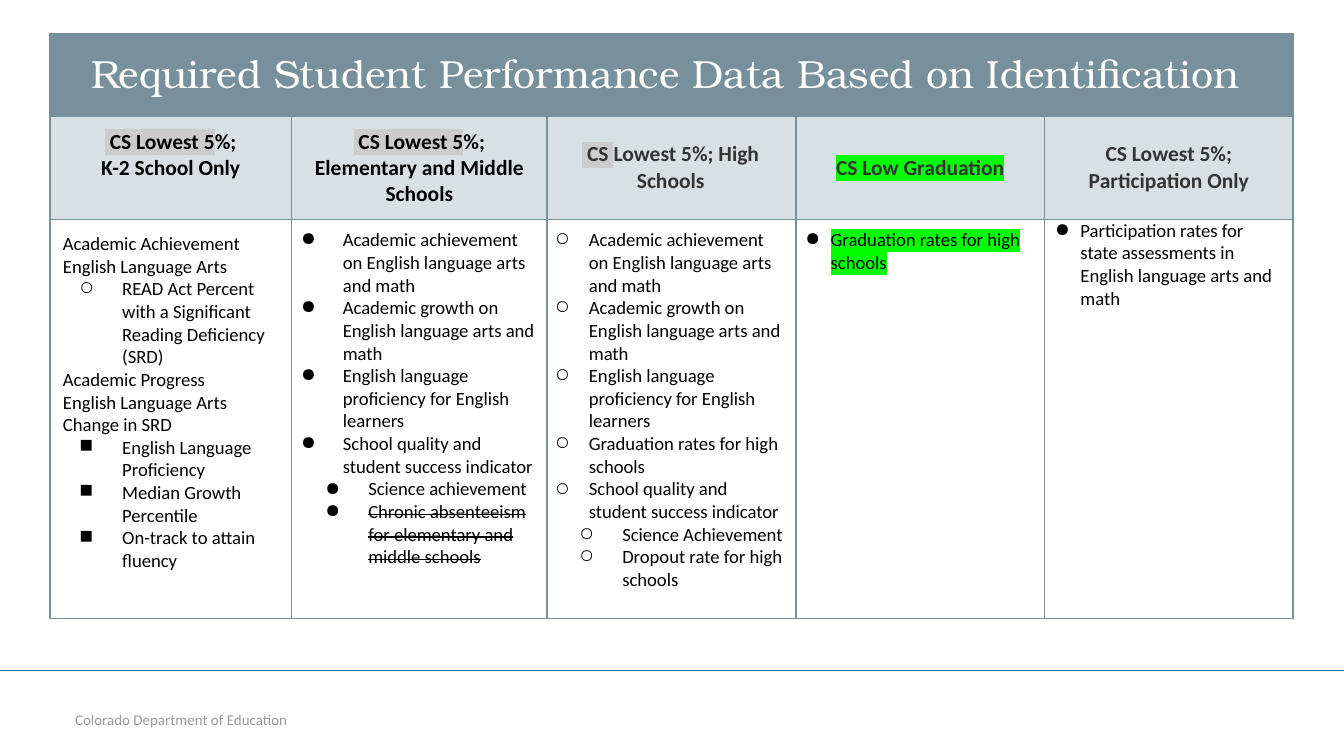
import dataclasses

import lxml.etree
import pptx
import pptx.dml.color
import pptx.enum.shapes
import pptx.enum.text
import pptx.oxml.ns
import pptx.util

Cm = pptx.util.Cm
Pt = pptx.util.Pt
qn = pptx.oxml.ns.qn

SLATE = "78909C"
BLACK = "000000"
CHARCOAL = "333333"
GRAY = "CCCCCC"
GREEN = "00FF00"

WIDE_MARGINS = (0.25, 0.25, 0.25, 0.25)
NARROW_MARGINS = (0.18, 0.18, 0.18, 0.18)
SIDE_MARGINS = (0.2, 0, 0.2, 0)


@dataclasses.dataclass
class Bullet:
    mark: str
    left: float
    hang: float
    level: int = 0


@dataclasses.dataclass
class Span:
    text: str
    highlight: str = ""
    strike: bool = False


@dataclasses.dataclass
class Column:
    width: float
    margins: tuple
    heading: list
    heading_color: str
    heading_middle: bool
    items: list


READ_ITEM = Bullet("○", 1.12, 0.81, 1)
PROGRESS_ITEM = Bullet("■", 1.12, 0.81, 2)
MIDDLE_ITEM = Bullet("●", 0.79, 0.81)
MIDDLE_SUBITEM = Bullet("●", 1.27, 0.81)
HIGH_ITEM = Bullet("○", 0.64, 0.66, 1)
HIGH_SUBITEM = Bullet("○", 1.27, 0.81, 1)
SINGLE_ITEM = Bullet("●", 0.48, 0.48)

SHARED_INDICATORS = [
    "Academic achievement on English language arts and math",
    "Academic growth on English language arts and math",
    "English language proficiency for English learners",
]
QUALITY = "School quality and student success indicator"
GRADUATION = "Graduation rates for high schools"

COLUMNS = [
    Column(4.57, WIDE_MARGINS,
           [[Span(" CS Lowest 5", GRAY), Span("%;")], [Span("K-2 School Only")]],
           BLACK, False,
           [(None, Span("Academic Achievement")),
            (None, Span("English Language Arts")),
            (READ_ITEM, Span("READ Act Percent with a Significant Reading Deficiency (SRD)")),
            (None, Span("Academic Progress")),
            (None, Span("English Language Arts")),
            (None, Span("Change in SRD")),
            (PROGRESS_ITEM, Span("English Language Proficiency")),
            (PROGRESS_ITEM, Span("Median Growth Percentile")),
            (PROGRESS_ITEM, Span("On-track to attain fluency"))]),
    Column(4.83, NARROW_MARGINS,
           [[Span(" CS Lowest 5", GRAY), Span("%; Elementary and Middle Schools")]],
           BLACK, False,
           [(MIDDLE_ITEM, Span(text)) for text in SHARED_INDICATORS + [QUALITY]]
           + [(MIDDLE_SUBITEM, Span("Science achievement")),
              (MIDDLE_SUBITEM,
               Span("Chronic absenteeism for elementary and middle schools", strike=True))]),
    Column(4.7, (0.15, 0.18, 0.18, 0.18),
           [[Span(" CS ", GRAY), Span("Lowest 5%; High Schools")]],
           CHARCOAL, True,
           [(HIGH_ITEM, Span(text)) for text in SHARED_INDICATORS + [GRADUATION, QUALITY]]
           + [(HIGH_SUBITEM, Span("Science Achievement")),
              (HIGH_SUBITEM, Span("Dropout rate for high schools"))]),
    Column(4.7, NARROW_MARGINS,
           [[Span("CS Low Graduation", GREEN)]], CHARCOAL, True,
           [(SINGLE_ITEM, Span(GRADUATION, GREEN))]),
    Column(4.7, SIDE_MARGINS,
           [[Span("CS Lowest 5%; Participation Only")]], CHARCOAL, True,
           [(SINGLE_ITEM,
             Span("Participation rates for state assessments in English language arts and math"))]),
]


def color(value):
    return pptx.dml.color.RGBColor.from_string(value)


def add_solid(parent, tag, value):
    element = lxml.etree.SubElement(parent, qn(tag))
    lxml.etree.SubElement(element, qn("a:srgbClr")).set("val", value)


def set_font(para, size, value, name="Calibri", bold=False):
    font = para.font
    font.size, font.name, font.bold = Pt(size), name, bold
    font.color.rgb = color(value)


def add_bullet(para, bullet):
    para.level = bullet.level
    properties = para._p.get_or_add_pPr()
    properties.set("marL", str(Cm(bullet.left)))
    properties.set("indent", str(-Cm(bullet.hang)))
    add_solid(properties, "a:buClr", BLACK)
    lxml.etree.SubElement(properties, qn("a:buChar")).set("char", bullet.mark)


def add_spans(para, spans):
    for span in spans:
        run = para.add_run()
        run.text = span.text
        properties = run._r.get_or_add_rPr()
        if span.strike:
            properties.set("strike", "sngStrike")
        if span.highlight:
            add_solid(properties, "a:highlight", span.highlight)


def next_para(frame, index):
    return frame.add_paragraph() if index else frame.paragraphs[0]


def style_cell(cell, fill, margins, line_width=1, opacity=100, middle=False):
    cell.margin_left, cell.margin_top, cell.margin_right, cell.margin_bottom = map(Cm, margins)
    anchors = pptx.enum.text.MSO_ANCHOR
    cell.vertical_anchor = anchors.MIDDLE if middle else anchors.TOP
    cell.fill.solid()
    cell.fill.fore_color.rgb = color(fill)
    properties = cell._tc.get_or_add_tcPr()
    if opacity < 100:
        shade = properties.find(".//" + qn("a:srgbClr"))
        lxml.etree.SubElement(shade, qn("a:alpha")).set("val", str(opacity * 1000))
    for position, side in enumerate("LRTB"):
        border = lxml.etree.Element(qn("a:ln" + side), w=str(Pt(line_width)))
        add_solid(border, "a:solidFill", SLATE)
        properties.insert(position, border)


def fill_title(table):
    for cell in table.rows[0].cells:
        style_cell(cell, SLATE, WIDE_MARGINS, line_width=0.75)
    table.cell(0, 0).merge(table.cell(0, len(COLUMNS) - 1))
    para = table.cell(0, 0).text_frame.paragraphs[0]
    para.text = "Required Student Performance Data Based on Identification "
    para.alignment = pptx.enum.text.PP_ALIGN.CENTER
    set_font(para, 21, "FFFFFF", "TeX Gyre Bonum")


def fill_heading(cell, column):
    style_cell(cell, SLATE, column.margins if column.heading_middle else WIDE_MARGINS,
               opacity=28, middle=column.heading_middle)
    for index, spans in enumerate(column.heading):
        para = next_para(cell.text_frame, index)
        para.alignment = pptx.enum.text.PP_ALIGN.CENTER
        add_spans(para, spans)
        set_font(para, 11.5, column.heading_color, bold=True)


def fill_items(cell, column):
    style_cell(cell, "FFFFFF", column.margins)
    for index, (bullet, span) in enumerate(column.items):
        para = next_para(cell.text_frame, index)
        if bullet:
            add_bullet(para, bullet)
        add_spans(para, [span])
        set_font(para, 10, BLACK)


def add_requirements(page, left, top, row_heights):
    width = sum(column.width for column in COLUMNS)
    table = page.shapes.add_table(len(row_heights), len(COLUMNS), Cm(left), Cm(top),
                                  Cm(width), Cm(sum(row_heights))).table
    table.first_row = table.horz_banding = False
    for row, height in zip(table.rows, row_heights):
        row.height = Cm(height)
    fill_title(table)
    for index, column in enumerate(COLUMNS):
        table.columns[index].width = Cm(column.width)
        fill_heading(table.cell(1, index), column)
        fill_items(table.cell(2, index), column)


def add_footer(page, left, top, width, height, rule_top, rule_width):
    rule = page.shapes.add_connector(pptx.enum.shapes.MSO_CONNECTOR.STRAIGHT,
                                     0, Cm(rule_top), Cm(rule_width), Cm(rule_top))
    rule.line.color.rgb = color("077682")
    rule.line.width = Pt(0.75)
    lxml.etree.SubElement(rule._element.spPr, qn("a:effectLst"))
    box = page.shapes.add_textbox(Cm(left), Cm(top), Cm(width), Cm(height))
    frame = box.text_frame
    frame.word_wrap = True
    frame.margin_left = frame.margin_top = frame.margin_right = frame.margin_bottom = 0
    frame.text = "Colorado Department of Education"
    set_font(frame.paragraphs[0], 8, "999999")


def main():
    deck = pptx.Presentation()
    deck.slide_width, deck.slide_height = Cm(25.4), Cm(14.29)
    page = deck.slides.add_slide(deck.slide_layouts[6])
    add_footer(page, 1.42, 13.44, 8.2, 0.34, rule_top=12.67, rule_width=25.4)
    add_requirements(page, 0.94, 0.64, [1.55, 1.96, 7.54])
    deck.save("out.pptx")


if __name__ == "__main__":
    main()
